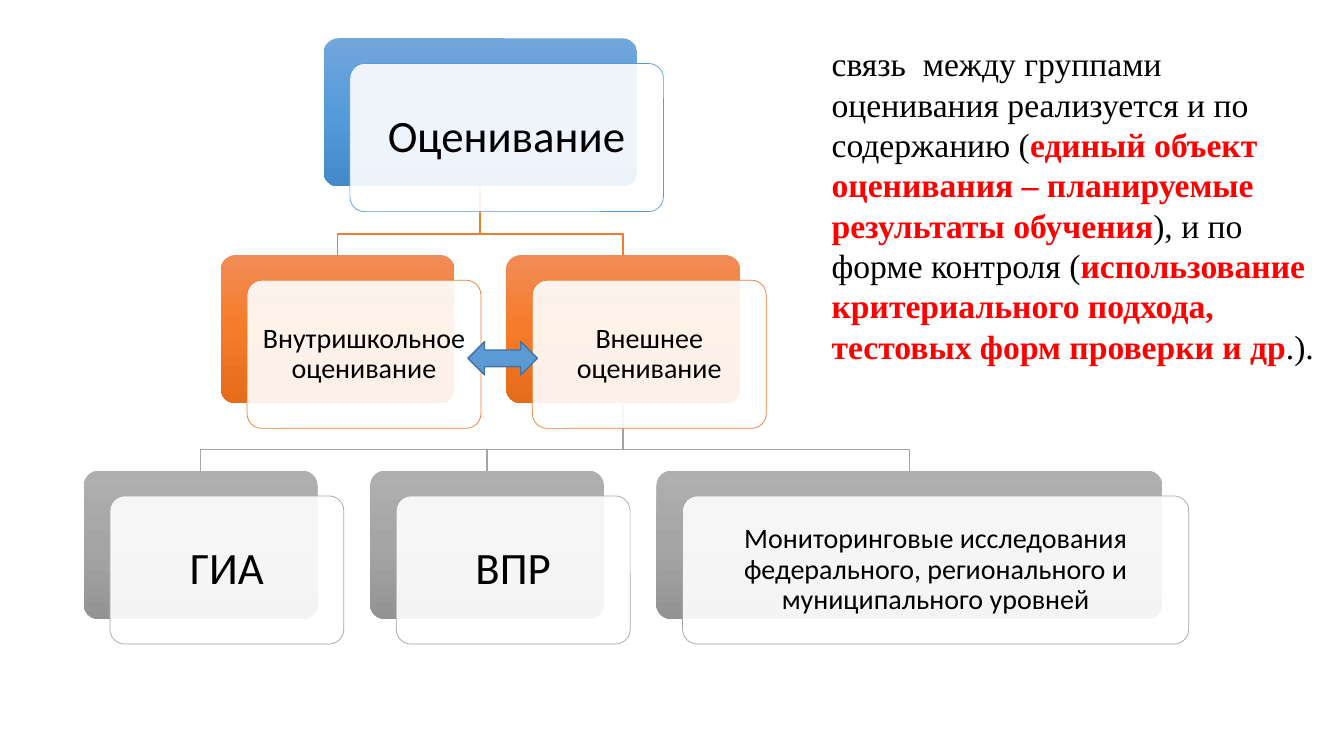
"""Builds a slide with a three-level hierarchy of school assessment and a remark beside it."""
from copy import deepcopy

from pptx import Presentation
from pptx.dml.color import RGBColor
from pptx.enum.shapes import MSO_SHAPE
from pptx.enum.text import MSO_ANCHOR, MSO_AUTO_SIZE, PP_ALIGN
from pptx.oxml.ns import qn
from pptx.util import Pt
from lxml.etree import SubElement

PX = 9144
COLORS = {
    "black": "000000", "white": "FFFFFF", "red": "FF0000",
    "blue": "5B9BD5", "dark blue": "43739E", "orange": "ED7D31", "gray": "A5A5A5",
}
GRADIENTS = {
    "blue": ("71A6DB", "559BDB", "448ACA"),
    "orange": ("F18C57", "F67B28", "E56C19"),
    "gray": ("AFAFAF", "A5A5A5", "939393"),
}
LEVELS = [("blue", 38), ("orange", 253), ("gray", 467)]
CARD_HEIGHT = 147
SHIFT_X, SHIFT_Y = 26, 25
BEND_ABOVE_CHILD = 21

CARDS = [
    ("Оценивание", 0, 321, 311, 32, None),
    ("Внутришкольное оценивание", 1, 219, 232, 20, 0),
    ("Внешнее оценивание", 1, 502, 232, 20, 0),
    ("ГИА", 2, 83, 232, 32, 2),
    ("ВПР", 2, 367, 232, 32, 2),
    ("Мониторинговые исследования федерального, регионального и муниципального уровней",
     2, 651, 502, 20, 2),
]
REMARK = [
    ("связь  между группами оценивания реализуется и по содержанию (", False),
    ("единый объект оценивания – планируемые результаты обучения", True),
    ("), и по форме контроля (", False),
    ("использование критериального подхода, тестовых форм проверки и др", True),
    (".).", False),
]


def add_box(preset, left, top, width, height):
    box = slide.shapes.add_shape(preset, left * PX, top * PX, width * PX, height * PX)
    box.shadow.inherit = False
    return box


def add_run(paragraph, text, font_name, size, color):
    run = paragraph.add_run()
    run.text = text
    run.font.name = font_name
    run.font.size = Pt(size)
    run.font.color.rgb = RGBColor.from_string(COLORS[color])
    return run


presentation = Presentation()
presentation.slide_width = 1333 * PX
presentation.slide_height = 750 * PX
slide = presentation.slides.add_slide(presentation.slide_layouts[6])

for _, level, left, width, _, parent in reversed(CARDS):
    if parent is None:
        continue
    color, top = LEVELS[level]
    _, parent_level, parent_left, parent_width, _, _ = CARDS[parent]
    parent_x = parent_left + parent_width // 2
    child_x = left + width // 2
    bend_y = top - BEND_ABOVE_CHILD
    builder = slide.shapes.build_freeform(
        parent_x, LEVELS[parent_level][1] + CARD_HEIGHT, scale=PX)
    builder.add_line_segments(
        [(parent_x, bend_y), (child_x, bend_y), (child_x, top)], close=False)
    branch = builder.convert_to_shape()
    branch.shadow.inherit = False
    branch.fill.background()
    branch.line.color.rgb = RGBColor.from_string(COLORS[color])
    branch.line.width = Pt(1)

for title, level, left, width, size, _ in CARDS:
    color, top = LEVELS[level]
    back = add_box(MSO_SHAPE.ROUNDED_RECTANGLE, left, top, width, CARD_HEIGHT)
    back.adjustments[0] = 0.1
    back.line.fill.background()
    back.fill.gradient()
    back.fill.gradient_angle = 270
    stop_list = back.element.spPr.find(qn("a:gradFill")).find(qn("a:gsLst"))
    stop_list.insert(1, deepcopy(stop_list[0]))
    for stop, position, shade in zip(back.fill.gradient_stops, (0, 0.5, 1), GRADIENTS[color]):
        stop.position = position
        stop.color.rgb = RGBColor.from_string(shade)

    front = add_box(MSO_SHAPE.ROUNDED_RECTANGLE, left + SHIFT_X, top + SHIFT_Y,
                    width, CARD_HEIGHT)
    front.adjustments[0] = 0.1
    front.fill.solid()
    front.fill.fore_color.rgb = RGBColor.from_string(COLORS["white"])
    white = front.element.spPr.find(qn("a:solidFill")).find(qn("a:srgbClr"))
    SubElement(white, qn("a:alpha")).set("val", "90000")
    front.line.color.rgb = RGBColor.from_string(COLORS[color])
    front.line.width = Pt(0.5)

    frame = front.text_frame
    frame.word_wrap = True
    frame.vertical_anchor = MSO_ANCHOR.MIDDLE
    margin = (13 if size == 32 else 8) * PX
    frame.margin_left = frame.margin_right = margin
    frame.margin_top = frame.margin_bottom = margin
    paragraph = frame.paragraphs[0]
    paragraph.alignment = PP_ALIGN.CENTER
    paragraph.line_spacing = 0.9
    add_run(paragraph, title, "Calibri", size, "black")

link_arrow = add_box(MSO_SHAPE.LEFT_RIGHT_ARROW, 464, 339, 69, 33)
link_arrow.fill.solid()
link_arrow.fill.fore_color.rgb = RGBColor.from_string(COLORS["blue"])
link_arrow.line.color.rgb = RGBColor.from_string(COLORS["dark blue"])
link_arrow.line.width = Pt(1)

remark = slide.shapes.add_textbox(815 * PX, 38 * PX, 518 * PX, 333 * PX)
remark.text_frame.word_wrap = True
remark.text_frame.auto_size = MSO_AUTO_SIZE.SHAPE_TO_FIT_TEXT
for text, stressed in REMARK:
    run = add_run(remark.text_frame.paragraphs[0], text, "Times New Roman", 24,
                  "red" if stressed else "black")
    run.font.bold = stressed

presentation.save("out.pptx")
